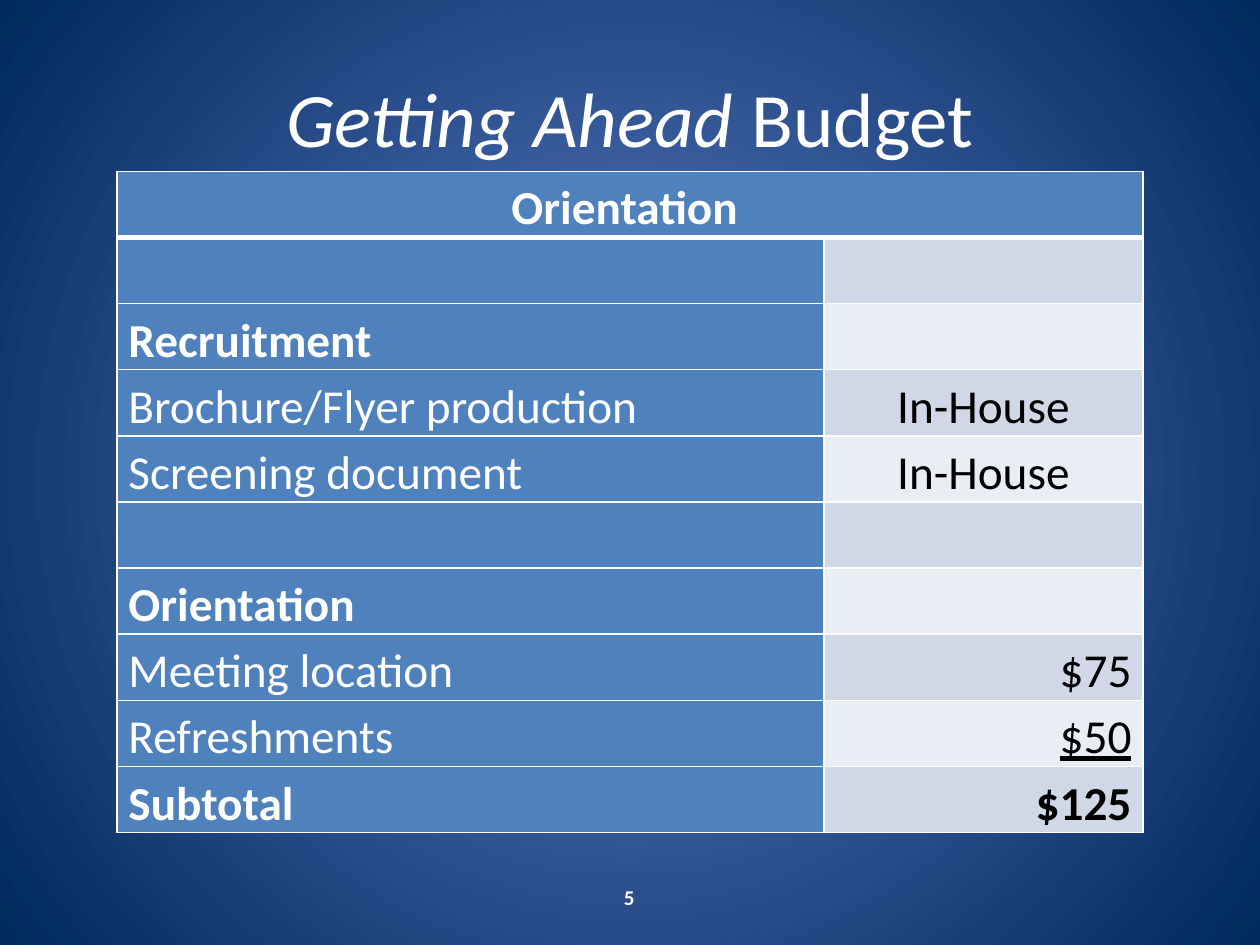
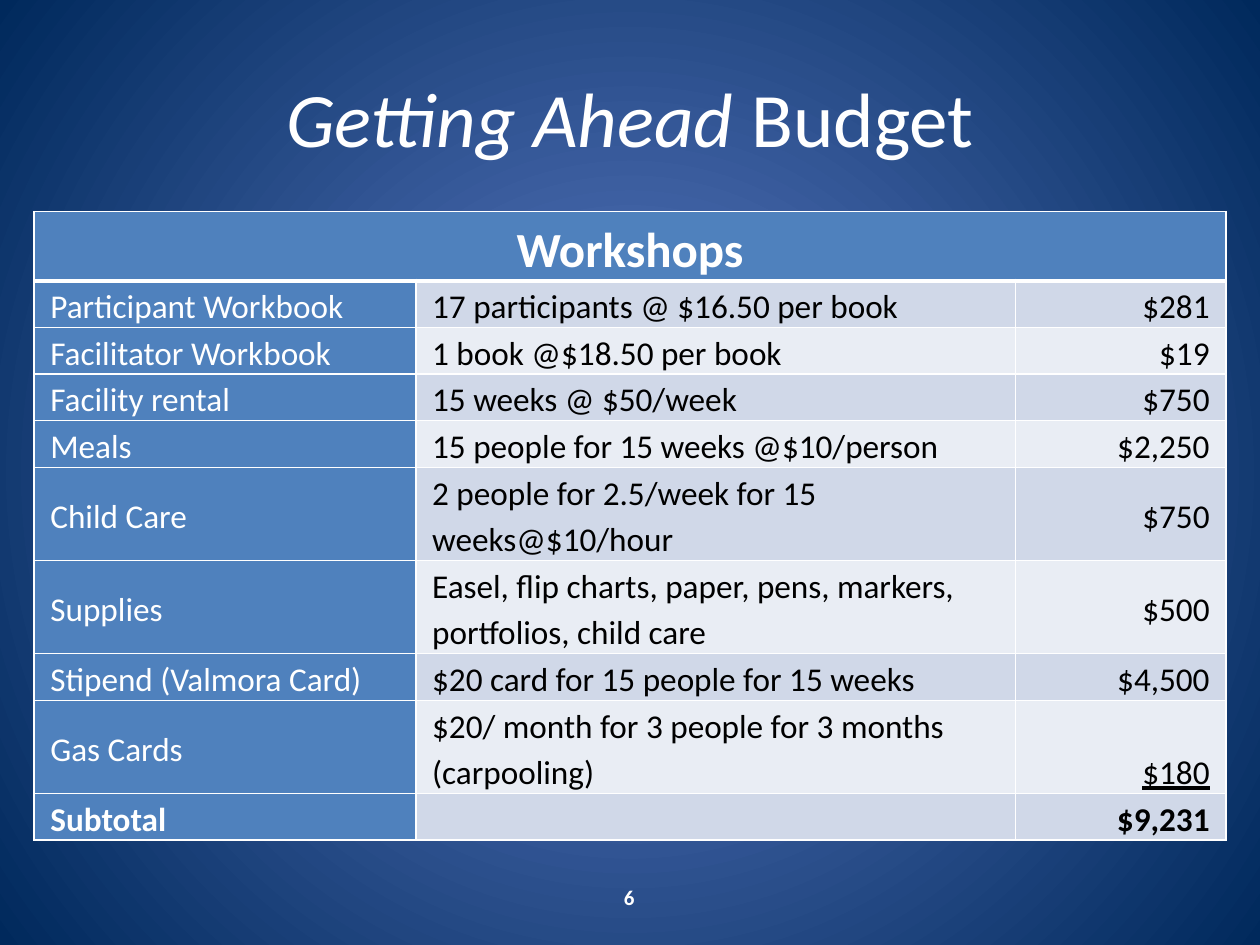
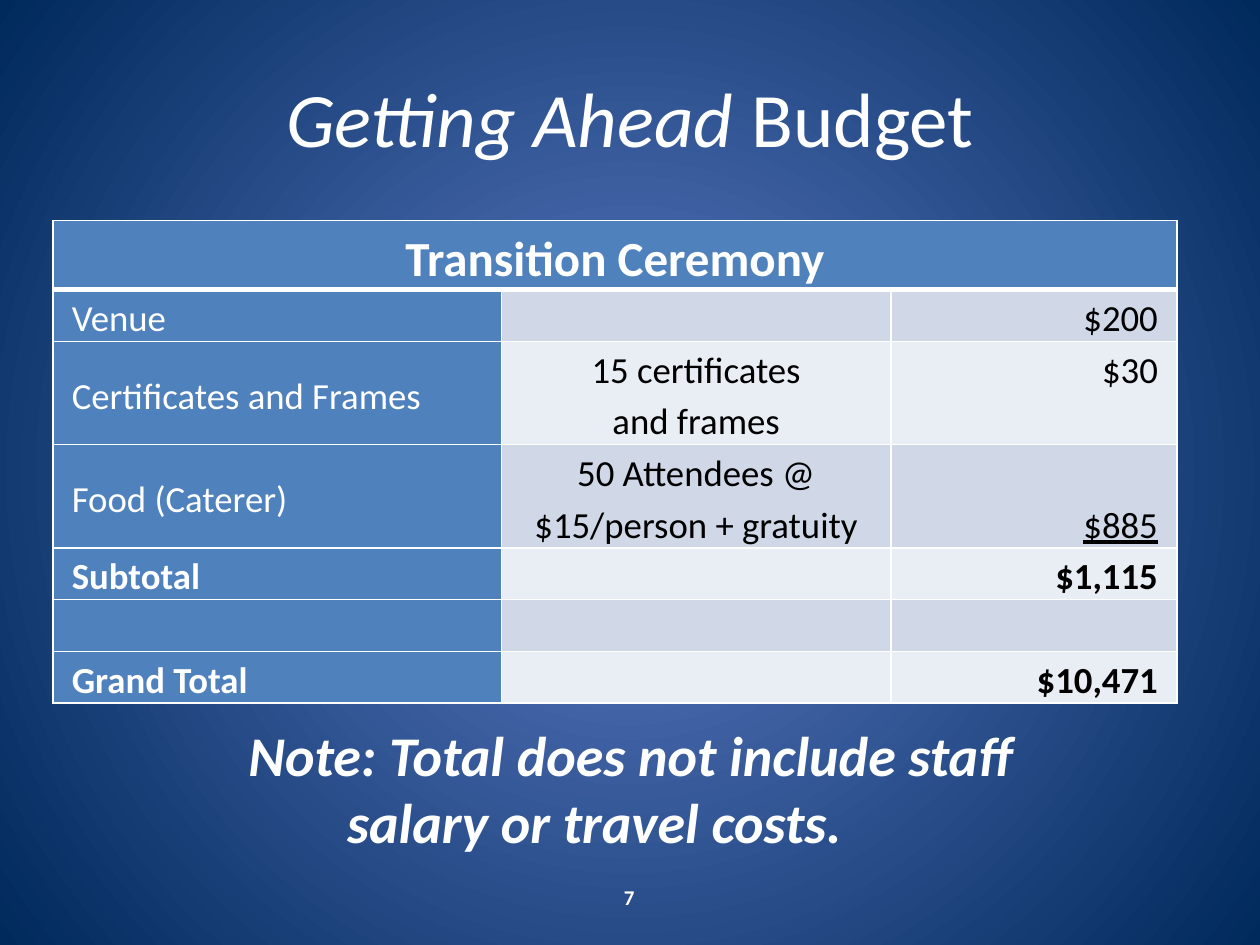
from dataclasses import dataclass

from lxml.etree import SubElement
from pptx import Presentation
from pptx.dml.color import RGBColor
from pptx.enum.text import MSO_ANCHOR as Anchor, PP_ALIGN as Align
from pptx.oxml.ns import qn
from pptx.util import Inches, Pt


@dataclass(frozen=True)
class Theme:
    """Colours, font and type sizes shared by every page."""
    font: str = "Calibri"
    glow: str = "5E7CC5"
    navy: str = "00295C"
    accent: str = "4F81BD"
    bands: tuple = ("D0D8E8", "E9EDF4")
    white: str = "FFFFFF"
    black: str = "000000"
    title: int = 44
    note: int = 32
    number: int = 12
    rule: int = 1
    head_rule: int = 3


@dataclass(frozen=True)
class Row:
    """One budget line: its texts, its height in lines and its emphasis."""
    texts: tuple
    lines: int = 1
    bold: bool = False
    underline: bool = False
    anchor: Anchor = Anchor.MIDDLE


@dataclass(frozen=True)
class Budget:
    """A budget table with its box, columns and type sizes."""
    heading: str
    left: float
    top: float
    columns: tuple
    head_height: float
    line_height: float
    head_size: int
    size: int
    inset: float
    detail_align: Align
    rows: tuple


THEME = Theme()
TITLE_BOX = (0.5, 0.3, 9, 1.25)
NUMBER_BOX = (3.83, 6.92, 2.33, 0.4)
NOTE_BOX = (1.42, 5.67, 7.17, 1.18)
NOTE = "Note: Total does not include staff salary or travel costs.\t\t"
FIRST_NUMBER = 5

BUDGETS = (
    Budget("Orientation ", 0.93, 1.36, (5.61, 2.53), 0.525, 0.525, 27, 27, 0.09, Align.CENTER, (
        Row(("", "")),
        Row(("Recruitment", ""), bold=True),
        Row(("Brochure/Flyer production", "In-House")),
        Row(("Screening document", "In-House")),
        Row(("", "")),
        Row(("Orientation", ""), bold=True),
        Row(("Meeting location", "$75")),
        Row(("Refreshments", "$50"), underline=True),
        Row(("Subtotal", "$125"), bold=True),
    )),
    Budget("Workshops", 0.27, 1.68, (3.03, 4.76, 1.67), 0.55, 0.37, 28, 19, 0.13, Align.LEFT, (
        Row(("Participant Workbook", "17 participants @ $16.50 per book", "$281")),
        Row(("Facilitator Workbook", "1 book @$18.50 per book", "$19")),
        Row(("Facility rental", "15 weeks @ $50/week", "$750")),
        Row(("Meals", "15 people for 15 weeks @$10/person", "$2,250")),
        Row(("Child Care", "2 people for 2.5/week for 15 weeks@$10/hour", "$750"), lines=2),
        Row(("Supplies", "Easel, flip charts, paper, pens, markers, portfolios, child care",
             "$500"), lines=2),
        Row(("Stipend (Valmora Card)", "$20 card for 15 people for 15 weeks", "$4,500")),
        Row(("Gas Cards", "$20/ month for 3 people for 3 months (carpooling)", "$180"),
            lines=2, underline=True, anchor=Anchor.BOTTOM),
        Row(("Subtotal", "", "$9,231"), bold=True),
    )),
    Budget("Transition Ceremony", 0.42, 1.75, (3.56, 3.09, 2.27), 0.55, 0.41, 28, 21, 0.15,
           Align.CENTER, (
        Row(("Venue", "", "$200")),
        Row(("Certificates and Frames", "15 certificates\nand frames", "$30"),
            lines=2, anchor=Anchor.TOP),
        Row(("Food (Caterer)", "50 Attendees @ $15/person + gratuity", "$885"),
            lines=2, underline=True, anchor=Anchor.BOTTOM),
        Row(("Subtotal", "", "$1,115"), bold=True),
        Row(("", "", "")),
        Row(("Grand Total", "", "$10,471"), bold=True),
    )),
)


def write(para, text, size, color=THEME.white, bold=False, italic=False, underline=False,
          align=Align.CENTER, spacing=None):
    """Append formatted text to a paragraph, breaking lines at newlines."""
    para.alignment = align
    if spacing:
        para.line_spacing = spacing
    for index, line in enumerate(text.split("\n")):
        if index:
            para.add_line_break()
        span = para.add_run()
        span.text = line
        font = span.font
        font.name, font.size = THEME.font, Pt(size)
        font.bold, font.italic, font.underline = bold, italic, underline
        font.color.rgb = RGBColor.from_string(color)


def add_box(page, box, anchor=Anchor.MIDDLE):
    """Add a wrapping text box and return its first paragraph."""
    frame = page.shapes.add_textbox(*map(Inches, box)).text_frame
    frame.word_wrap = True
    frame.vertical_anchor = anchor
    return frame.paragraphs[0]


def paint_background(master):
    """Give the master a radial gradient from glow to navy."""
    fill = master.background.fill
    fill.gradient()
    for stop, color in zip(fill.gradient_stops, (THEME.glow, THEME.navy)):
        stop.color.rgb = RGBColor.from_string(color)
    gradient = next(master.element.iter(qn("a:gradFill")))
    gradient.remove(gradient.find(qn("a:lin")))
    circle = SubElement(gradient, qn("a:path"), path="circle")
    SubElement(circle, qn("a:fillToRect"), dict.fromkeys("ltrb", "50000"))


def style_cell(cell, fill, inset, top=THEME.rule, bottom=THEME.rule):
    """Set the borders, fill and insets of a cell."""
    properties = cell._tc.get_or_add_tcPr()
    for side, width in zip("LRTB", (THEME.rule, THEME.rule, top, bottom)):
        line = SubElement(properties, qn(f"a:ln{side}"), w=str(Pt(width)))
        solid = SubElement(line, qn("a:solidFill"))
        SubElement(solid, qn("a:srgbClr"), val=THEME.white)
    cell.fill.solid()
    cell.fill.fore_color.rgb = RGBColor.from_string(fill)
    cell.margin_left = cell.margin_right = Inches(inset)
    cell.margin_top = cell.margin_bottom = 0


def fill_row(cells, row, budget, band, top):
    """Write one budget line into its table cells."""
    last = len(row.texts) - 1
    for column, (cell, text) in enumerate(zip(cells, row.texts)):
        label, amount = column == 0, column == last and text.startswith("$")
        style_cell(cell, THEME.accent if label else band, budget.inset, top=top)
        cell.vertical_anchor = row.anchor if amount else Anchor.MIDDLE
        if text:
            align = Align.LEFT if label else Align.RIGHT if amount else budget.detail_align
            write(cell.text_frame.paragraphs[0], text, budget.size,
                  color=THEME.white if label else THEME.black, bold=row.bold,
                  underline=row.underline and amount, align=align, spacing=1.15)


def add_budget(page, budget):
    """Add the budget table with its merged heading and banded lines."""
    heights = [budget.head_height] + [row.lines * budget.line_height for row in budget.rows]
    box = (budget.left, budget.top, sum(budget.columns), sum(heights))
    table = page.shapes.add_table(len(heights), len(budget.columns), *map(Inches, box)).table
    for column, width in zip(table.columns, budget.columns):
        column.width = Inches(width)
    for line, height in zip(table.rows, heights):
        line.height = Inches(height)
    heading, *others = table.rows[0].cells
    for cell in (heading, *others):
        style_cell(cell, THEME.accent, budget.inset, bottom=THEME.head_rule)
    heading.merge(others[-1])
    write(heading.text_frame.paragraphs[0], budget.heading, budget.head_size,
          bold=True, spacing=1.15)
    for index, row in enumerate(budget.rows):
        top = THEME.rule if index else THEME.head_rule
        fill_row(table.rows[index + 1].cells, row, budget, THEME.bands[index % 2], top)


def add_page(deck, number, budget):
    """Add a page with the shared title, its number and its budget."""
    page = deck.slides.add_slide(deck.slide_layouts[6])
    title = add_box(page, TITLE_BOX)
    write(title, "Getting Ahead", THEME.title, italic=True)
    write(title, " Budget", THEME.title)
    write(add_box(page, NUMBER_BOX), str(number), THEME.number, bold=True)
    add_budget(page, budget)
    return page


def main():
    """Build and save the deck."""
    deck = Presentation()
    deck.slide_width, deck.slide_height = Inches(10), Inches(7.5)
    paint_background(deck.slide_master)
    for number, budget in enumerate(BUDGETS, FIRST_NUMBER):
        page = add_page(deck, number, budget)
    write(add_box(page, NOTE_BOX, Anchor.TOP), NOTE, THEME.note, bold=True, italic=True)
    deck.save("out.pptx")


if __name__ == "__main__":
    main()
